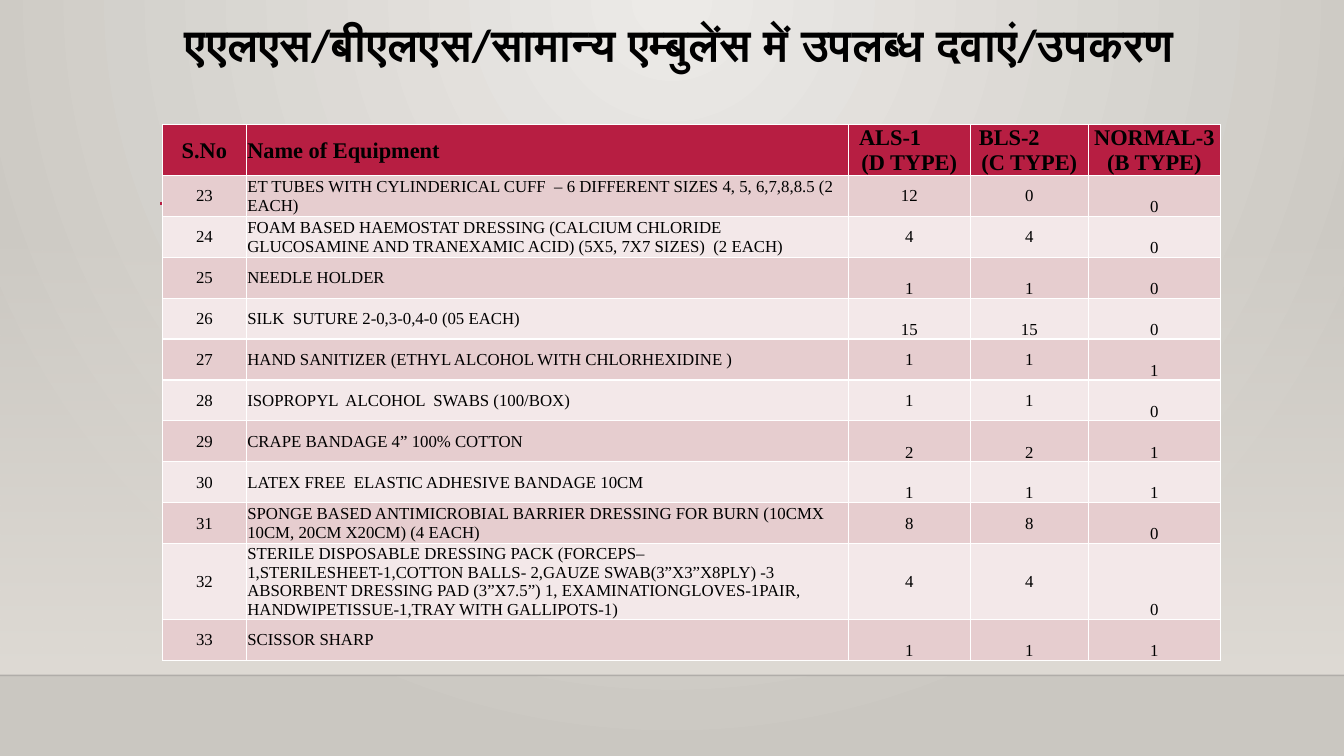
import pptx
import pptx.util
import pptx.dml.color
import pptx.enum.shapes
import pptx.enum.text
import pptx.oxml
import pptx.oxml.ns

Pt = pptx.util.Pt
Align = pptx.enum.text.PP_ALIGN
Anchor = pptx.enum.text.MSO_ANCHOR

HUES = {
    "glow": "ECEAE7", "edge": "CAC7C1", "wall": "DFDBD5", "ink": "000000",
    "seam": "000001", "red": "B71E42", "odd": "E6CDCF", "even": "F3E8E9",
}
TITLE = "एएलएस/बीएलएस/सामान्य एम्बुलेंस में उपलब्ध दवाएं/उपकरण"
HEADS = ["S.No", "Name of Equipment", "ALS-1\n(D TYPE)", "BLS-2\n(C TYPE)", "NORMAL-3\n(B TYPE)"]
WIDTHS = [60, 430, 87.1, 84.4, 94.3]
SHIFTS = {2: 7, 3: 5.5}
ITEMS = [
    (23, "ET TUBES WITH CYLINDERICAL CUFF  – 6 DIFFERENT SIZES 4, 5, 6,7,8,8.5 (2 EACH)", 12, 0, 0),
    (24, "FOAM BASED HAEMOSTAT DRESSING (CALCIUM CHLORIDE GLUCOSAMINE AND TRANEXAMIC ACID) "
         "(5X5, 7X7 SIZES)  (2 EACH)", 4, 4, 0),
    (25, "NEEDLE HOLDER", 1, 1, 0),
    (26, "SILK  SUTURE 2-0,3-0,4-0 (05 EACH)", 15, 15, 0),
    (27, "HAND SANITIZER (ETHYL ALCOHOL WITH CHLORHEXIDINE )", 1, 1, 1),
    (28, "ISOPROPYL  ALCOHOL  SWABS (100/BOX)", 1, 1, 0),
    (29, "CRAPE BANDAGE 4” 100% COTTON", 2, 2, 1),
    (30, "LATEX FREE  ELASTIC ADHESIVE BANDAGE 10CM", 1, 1, 1),
    (31, "SPONGE BASED ANTIMICROBIAL BARRIER DRESSING FOR BURN (10CMX 10CM, 20CM X20CM) (4 EACH)", 8, 8, 0),
    (32, "STERILE DISPOSABLE DRESSING PACK (FORCEPS–1,STERILESHEET-1,COTTON BALLS- 2,"
         "GAUZE SWAB(3”X3”X8PLY) -3 ABSORBENT DRESSING PAD (3”X7.5”) 1, EXAMINATIONGLOVES-1PAIR, "
         "HANDWIPETISSUE-1,TRAY WITH GALLIPOTS-1)", 4, 4, 0),
    (33, "SCISSOR SHARP", 1, 1, 1),
]
LOW = {25, 26, 29, 30, 33}


def hue(name):
    """Return the named colour."""
    return pptx.dml.color.RGBColor.from_string(HUES[name])


def node(tag, **attrs):
    """Return a new drawing element."""
    part = pptx.oxml.parse_xml(f"<a:{tag} {pptx.oxml.ns.nsdecls('a')}/>")
    for key, val in attrs.items():
        part.set(key, str(val))
    return part


def blend(fill, names):
    """Fill with a gradient of two named colours."""
    fill.gradient()
    for stop, name, place in zip(fill.gradient_stops, names, (0, 1)):
        stop.color.rgb = hue(name)
        stop.position = place


def fade(shape, share):
    """Make the first colour of a shape see-through."""
    shape._element.xpath(".//p:spPr//a:srgbClr")[0].append(node("alpha", val=share * 1000))


def rule(slide, left, top, width, name, weight):
    """Draw a level line."""
    line = slide.shapes.add_connector(
        pptx.enum.shapes.MSO_CONNECTOR.STRAIGHT, Pt(left), Pt(top), Pt(left + width), Pt(top))
    line.line.color.rgb = hue(name)
    line.line.width = Pt(weight)
    line._element.spPr.append(node("effectLst"))
    return line


def room(slide, left, top, width, height):
    """Paint the backdrop, with the wall in the given box."""
    blend(slide.background.fill, ("glow", "edge"))
    grad = slide._element.xpath(".//p:bg//a:gradFill")[0]
    for lin in grad.xpath("a:lin"):
        grad.remove(lin)
    ring = node("path", path="circle")
    ring.append(node("fillToRect", l=43000, t=0, r=43000, b=100000))
    grad.append(ring)
    wall = slide.shapes.add_shape(
        pptx.enum.shapes.MSO_SHAPE.RECTANGLE, Pt(left), Pt(top), Pt(width), Pt(height))
    wall.shadow.inherit = False
    wall.line.fill.background()
    blend(wall.fill, ("wall", "wall"))
    wall.fill.gradient_angle = 270
    fade(wall, 0)
    fade(rule(slide, left, top + height, width, "seam", 1), 20)


def title(slide, left, top, width, height):
    """Place the title in its box."""
    head = slide.shapes.title
    head.left, head.top, head.width, head.height = Pt(left), Pt(top), Pt(width), Pt(height)
    frame = head.text_frame
    frame.text = TITLE
    frame.word_wrap = True
    frame.auto_size = pptx.enum.text.MSO_AUTO_SIZE.NONE
    frame.vertical_anchor = Anchor.TOP
    para = frame.paragraphs[0]
    para.alignment = Align.CENTER
    para.line_spacing = 0.9
    style(para, "Calibri", 32, True)


def style(para, face, size, bold):
    """Set the font of a paragraph."""
    font = para.font
    font.name, font.size, font.bold = face, Pt(size), bold
    font.color.rgb = hue("ink")


def write(cell, text, fill, anchor, align, size, bold):
    """Fill and format one table cell."""
    cell.fill.solid()
    cell.fill.fore_color.rgb = hue(fill)
    cell.margin_left = cell.margin_right = cell.margin_top = Pt(0.7)
    cell.margin_bottom = 0
    cell.vertical_anchor = anchor
    cell.text = text
    for para in cell.text_frame.paragraphs:
        para.alignment = align
        style(para, "Times New Roman", size, bold)


def grid(slide, left, top, width, height):
    """Build the table of equipment in its box."""
    rows = [HEADS] + ITEMS
    table = slide.shapes.add_table(
        len(rows), len(HEADS), Pt(left), Pt(top), Pt(width), Pt(height)).table
    for col, wide in zip(table.columns, WIDTHS):
        col.width = Pt(wide)
    for r, row in enumerate(rows):
        table.rows[r].height = Pt(29.25)
        fill = "red" if r == 0 else "odd" if r % 2 else "even"
        for c, text in enumerate(row):
            low = c == 4 or (c > 1 and row[0] in LOW)
            write(table.cell(r, c), str(text), fill,
                  Anchor.BOTTOM if low else Anchor.MIDDLE,
                  Align.LEFT if c == 1 else Align.CENTER,
                  12 if r else 16, r == 0)
    for c, shift in SHIFTS.items():
        para = table.cell(0, c).text_frame.paragraphs[0]
        para.alignment = Align.LEFT
        para._p.get_or_add_pPr().set("marL", str(Pt(shift)))


def main():
    """Build and save the slide."""
    deck = pptx.Presentation()
    deck.slide_width, deck.slide_height = Pt(960), Pt(540)
    slide = deck.slides.add_slide(deck.slide_layouts[5])
    room(slide, 0, 159, 960, 323.4)
    rule(slide, 114.5, 145.4, 756.7, "red", 2.5)
    title(slide, 107.3, 13, 756, 82.8)
    grid(slide, 116, 89, sum(WIDTHS), 29.25 * (len(ITEMS) + 1))
    deck.save("out.pptx")


if __name__ == "__main__":
    main()
